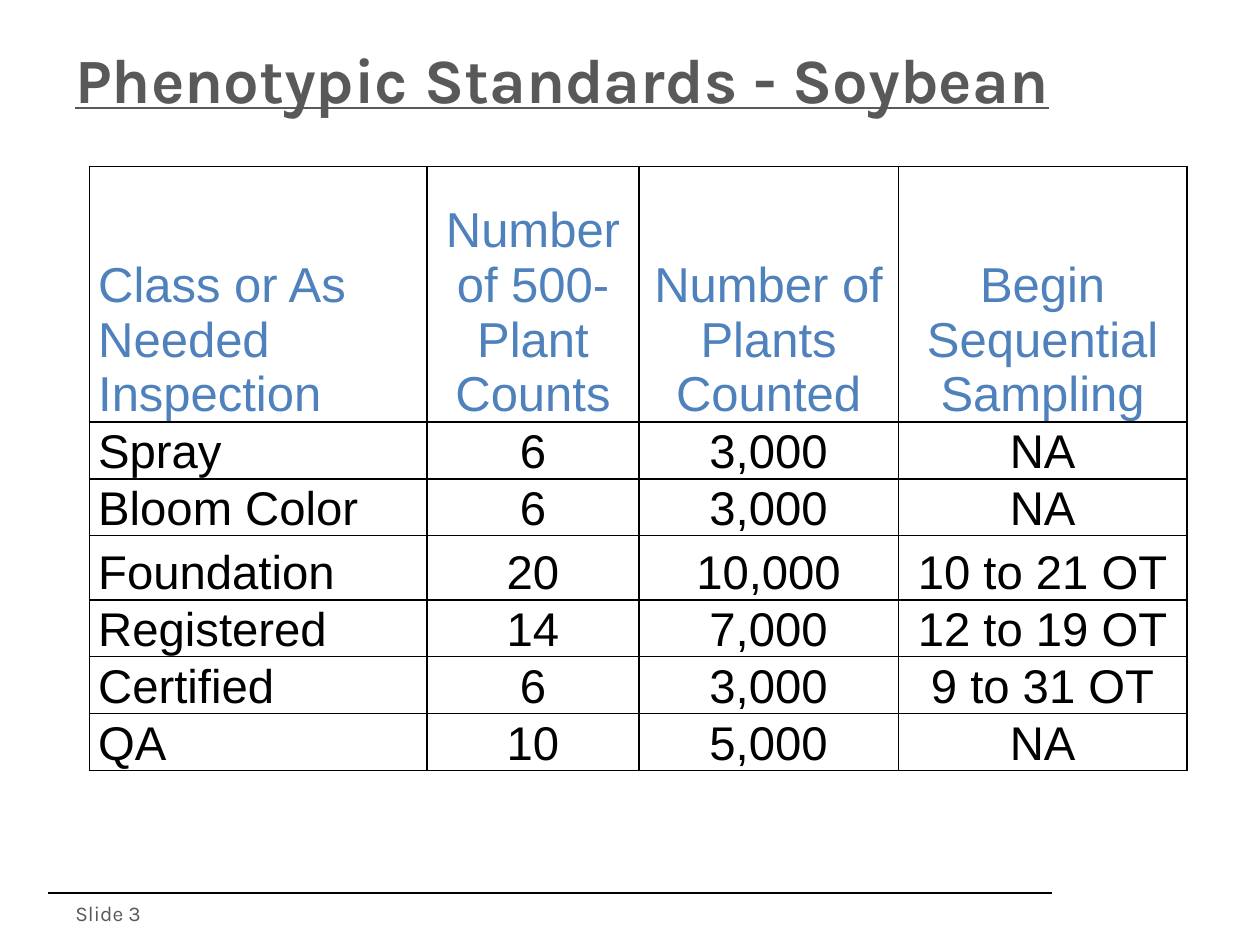
from lxml import etree
from pptx import Presentation
from pptx.dml.color import RGBColor
from pptx.enum.shapes import MSO_CONNECTOR
from pptx.enum.text import MSO_ANCHOR, PP_ALIGN
from pptx.oxml.ns import qn
from pptx.util import Pt

PX = 9144  # 100 px to the inch
BLACK = RGBColor(0, 0, 0)
GREY = RGBColor(0x59, 0x59, 0x59)
BLUE = RGBColor(0x4F, 0x81, 0xBD)
LEFT, CENTER = PP_ALIGN.LEFT, PP_ALIGN.CENTER
MIDDLE, TOP, BOTTOM = MSO_ANCHOR.MIDDLE, MSO_ANCHOR.TOP, MSO_ANCHOR.BOTTOM
STRAIGHT = MSO_CONNECTOR.STRAIGHT

COLS = [268, 168, 206, 229]
ROWS = [203, 44, 44, 51, 44, 44, 44]
DATA = [
    ["Class or As Needed Inspection", "Number of 500-Plant Counts",
     "Number of Plants Counted", "Begin Sequential Sampling"],
    ["Spray", "6", "3,000", "NA"],
    ["Bloom Color", "6", "3,000", "NA"],
    ["Foundation", "20", "10,000", "10 to 21 OT"],
    ["Registered", "14", "7,000", "12 to 19 OT"],
    ["Certified", "6", "3,000", "9 to 31 OT"],
    ["QA", "10", "5,000", "NA"],
]


def write(frame, text, color, **font):
    """Put text in the frame's first paragraph and return that paragraph."""
    para = frame.paragraphs[0]
    run = para.add_run()
    run.text = text
    run.font.color.rgb = color
    for key, value in font.items():
        setattr(run.font, key, value)
    return para


def border(cell, side, width):
    props = cell._tc.get_or_add_tcPr()
    line = etree.SubElement(props, qn("a:ln" + side), w=str(Pt(width)))
    fill = etree.SubElement(line, qn("a:solidFill"))
    etree.SubElement(fill, qn("a:srgbClr"), val=str(BLACK))


prs = Presentation()
prs.slide_width, prs.slide_height = 1000 * PX, 750 * PX
slide = prs.slides.add_slide(prs.slide_layouts[6])
shapes = slide.shapes

rule = shapes.add_connector(STRAIGHT, 38 * PX, 709 * PX, 835 * PX, 709 * PX)
rule.line.color.rgb = BLACK
rule.line.width = Pt(1)
etree.SubElement(rule._element.spPr, qn("a:effectLst"))

texts = [
    ("Phenotypic Standards - Soybean", (50, 0, 900, 125), MIDDLE,
     {"size": Pt(36), "bold": True, "underline": True}),
    ("Slide 3", (50, 710, 100, 35), TOP, {"size": Pt(12)}),
]
for text, place, anchor, font in texts:
    frame = shapes.add_textbox(*[n * PX for n in place]).text_frame
    frame.word_wrap = True
    frame.vertical_anchor = anchor
    write(frame, text, GREY, name="Karla", **font)

table = shapes.add_table(len(ROWS), len(COLS), 71 * PX, 132 * PX,
                         sum(COLS) * PX, sum(ROWS) * PX).table
table.first_row = table.horz_banding = False
for col, width in zip(table.columns, COLS):
    col.width = width * PX
for row, height in zip(table.rows, ROWS):
    row.height = height * PX

for r, values in enumerate(DATA):
    color, size = (BLUE, 28) if r == 0 else (BLACK, 27)
    edges = {"L": 1, "R": 1, "T": 1.5 if r == 1 else 1, "B": 1.5 if r == 0 else 1}
    for c, value in enumerate(values):
        cell = table.cell(r, c)
        cell.margin_left = cell.margin_right = 7 * PX
        cell.margin_top = cell.margin_bottom = 0
        cell.vertical_anchor = BOTTOM
        para = write(cell.text_frame, value, color, name="Arial", size=Pt(size))
        para.alignment = CENTER if c else LEFT
        for side, width in edges.items():
            border(cell, side, width)
        cell.fill.background()

prs.save("out.pptx")
